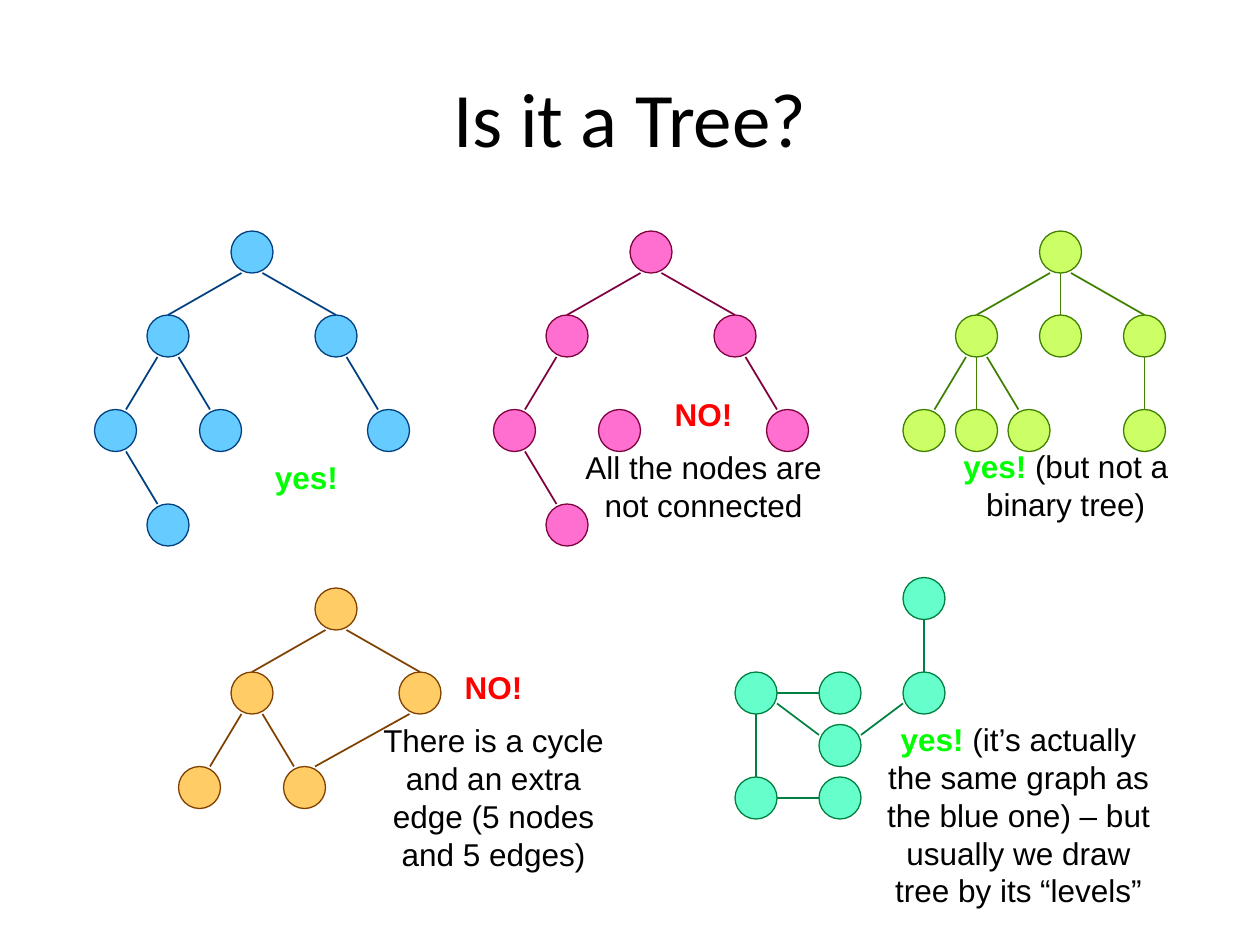
from lxml.etree import SubElement
from pptx import Presentation
from pptx.dml.color import RGBColor
from pptx.enum.shapes import MSO_CONNECTOR as Connector, MSO_SHAPE as Shape
from pptx.enum.text import MSO_ANCHOR as Anchor, PP_ALIGN as Align
from pptx.oxml.ns import qn
from pptx.util import Inches, Pt

CELLS_PER_INCH = 12
COLUMNS, ROWS = 120, 90
NODE = 4  # node diameter in cells
LEVEL = 8  # cells between the first two levels of a tree

COLORS = {
    "black": "000000", "yes": "00FF00", "no": "FF0000",
    "blue": "66CCFF", "blue edge": "004080",
    "pink": "FF6FCF", "pink edge": "800040",
    "lime": "CCFF66", "lime edge": "408000",
    "orange": "FFCC66", "orange edge": "804000",
    "teal": "66FFCC", "teal edge": "008040",
}

# Node positions in cells, from the top left of each graph
ORANGE_NODES = {"root": (13, 0), "L": (5, 8), "R": (21, 8),
                "LL": (0, 17), "LR": (10, 17)}
BLUE_NODES = {**ORANGE_NODES, "RR": (26, 17), "LLR": (5, 26)}
LIME_NODES = {**ORANGE_NODES, "M": (13, 8), "LM": (5, 17), "RM": (21, 17)}
TEAL_NODES = {"RR": (16, 0), "R": (16, 9), "root": (8, 14), "L": (0, 9),
              "LR": (8, 9), "LL": (0, 19), "LLR": (8, 19)}

# Colour, origin in cells, nodes, edges
GRAPHS = [
    ("pink", (47, 22), BLUE_NODES, "root-L root-R L-LL R-RR LL-LLR"),
    ("orange", (17, 56), ORANGE_NODES, "root-L root-R L-LL L-LR R-LR"),
    ("lime", (86, 22), LIME_NODES,
     "root-L root-M root-R L-LL L-LM L-LR R-RM"),
    ("blue", (9, 22), BLUE_NODES, "root-L root-R L-LL L-LR R-RR LL-LLR"),
    ("teal", (70, 55), TEAL_NODES, "L-root R-root L-LL L-LR RR-R LL-LLR"),
]

# Box in cells, alignment, paragraphs of (text, colour) runs
VERDICTS = [
    ((25, 43, 11, 6), Align.LEFT, [[("yes!", "yes")]]),
    ((54, 37, 26, 15), Align.CENTER,
     [[("NO!", "no")], [("All the nodes are not connected", "black")]]),
    ((34, 63, 26, 22.2), Align.CENTER,
     [[("NO!", "no")],
      [("There is a cycle and an extra edge (5 nodes and 5 edges)", "black")]]),
    ((90, 42, 23, 9.6), Align.CENTER,
     [[("yes!", "yes"), (" (but not a binary tree)", "black")]]),
    ((83, 68, 28, 20.4), Align.CENTER,
     [[("yes!", "yes"),
       (" (it’s actually the same graph as the blue one) – but usually "
        "we draw tree by its “levels”", "black")]]),
]


def cells(*counts):
    return [Inches(count / CELLS_PER_INCH) for count in counts]


def rgb(name):
    return RGBColor.from_string(COLORS[name])


def edge_ports(parent, child):
    """Return where an edge leaves the parent and meets the child."""
    dx, dy = child[0] - parent[0], child[1] - parent[1]
    side = (dx > 0) - (dx < 0)
    middle = NODE / 2
    if dy == 0:
        start, end = (middle + side * middle, middle), (middle - side * middle, middle)
    elif dx and dy < LEVEL:
        start, end = (middle + side * middle, 3), (middle - side * middle, 1)
    else:
        meet = middle if dy == LEVEL else middle - side
        start, end = (middle + side, NODE), (meet, 0)
    return (parent[0] + start[0], parent[1] + start[1],
            child[0] + end[0], child[1] + end[1])


def add_node(shapes, position, color):
    node = shapes.add_shape(Shape.OVAL, *cells(*position, NODE, NODE))
    node.shadow.inherit = False
    node.fill.solid()
    node.fill.fore_color.rgb = rgb(color)
    node.line.color.rgb = rgb(f"{color} edge")
    node.line.width = Pt(0.75)


def add_edge(shapes, parent, child, color):
    edge = shapes.add_connector(Connector.STRAIGHT, *cells(*edge_ports(parent, child)))
    edge.line.color.rgb = rgb(f"{color} edge")
    edge.line.width = Pt(1)
    SubElement(edge.element.spPr, qn("a:effectLst"))


def add_graph(slide, color, origin, nodes, edges):
    shapes = slide.shapes.add_group_shape().shapes
    placed = {name: (origin[0] + col, origin[1] + row)
              for name, (col, row) in nodes.items()}
    for position in placed.values():
        add_node(shapes, position, color)
    for pair in edges.split():
        parent, child = pair.split("-")
        add_edge(shapes, placed[parent], placed[child], color)


def add_text(slide, box, align, paragraphs, font="Arial", size=18, anchor=Anchor.TOP):
    frame = slide.shapes.add_textbox(*cells(*box)).text_frame
    frame.word_wrap = True
    frame.vertical_anchor = anchor
    for index, runs in enumerate(paragraphs):
        paragraph = frame.add_paragraph() if index else frame.paragraphs[0]
        paragraph.alignment = align
        if index:
            paragraph.space_before = Pt(size / 2)
        for words, color in runs:
            run = paragraph.add_run()
            run.text = words
            run.font.name = font
            run.font.size = Pt(size)
            run.font.bold = color != "black"
            run.font.color.rgb = rgb(color)


def main():
    deck = Presentation()
    deck.slide_width, deck.slide_height = cells(COLUMNS, ROWS)
    slide = deck.slides.add_slide(deck.slide_layouts[6])
    add_text(slide, (6, 3.6, COLUMNS - 12, 15), Align.CENTER,
             [[("Is it a Tree?", "black")]], "Calibri", 44, Anchor.MIDDLE)
    for graph in GRAPHS:
        add_graph(slide, *graph)
    for verdict in VERDICTS:
        add_text(slide, *verdict)
    deck.save("out.pptx")


if __name__ == "__main__":
    main()
